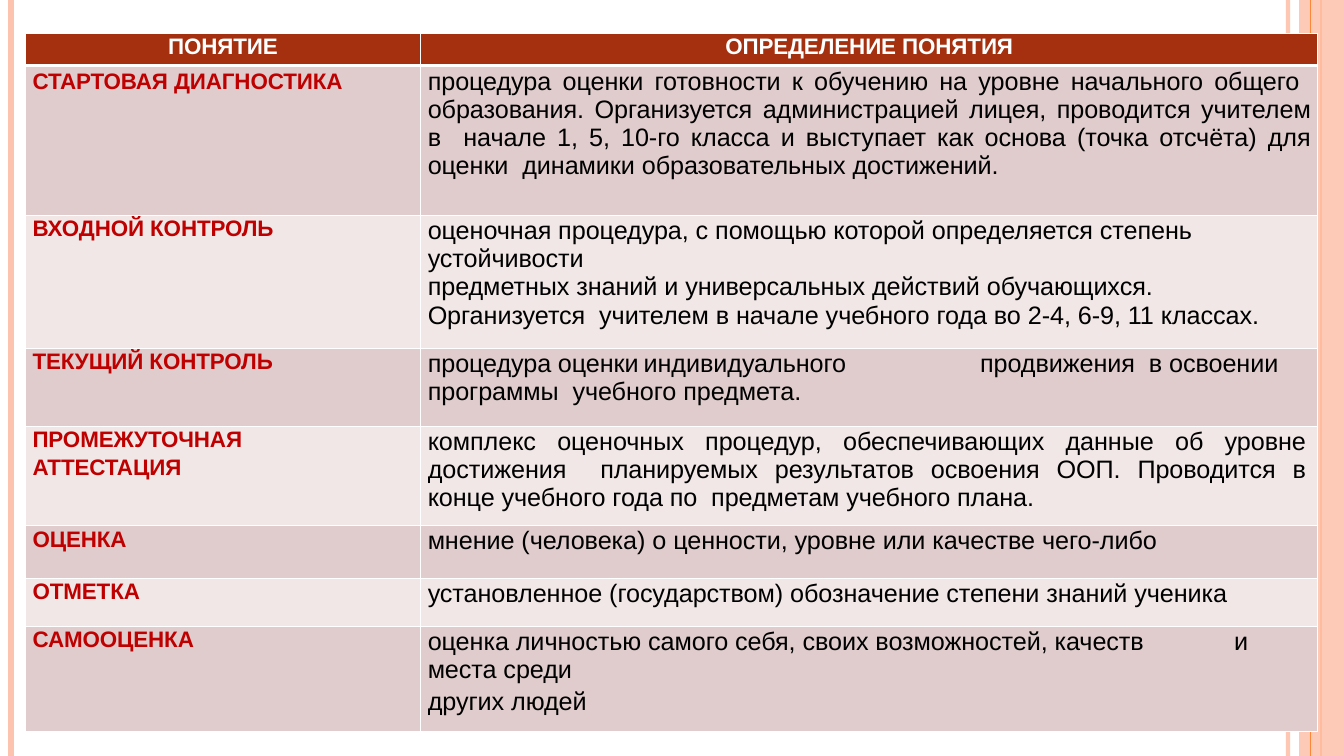
from lxml import etree
from pptx import Presentation
from pptx.dml.color import RGBColor
from pptx.enum.shapes import MSO_CONNECTOR, MSO_SHAPE
from pptx.enum.text import PP_ALIGN
from pptx.oxml.ns import qn
from pptx.util import Cm, Pt

STRAIGHT = MSO_CONNECTOR.STRAIGHT
RECTANGLE = MSO_SHAPE.RECTANGLE
LEFT, CENTER, JUSTIFY = PP_ALIGN.LEFT, PP_ALIGN.CENTER, PP_ALIGN.JUSTIFY

WIDTH, HEIGHT = 33.87, 19.05
COLUMN_WIDTHS = (9.96, 22.61)
HEADER_HEIGHT = 0.81
HEADINGS = ("ПОНЯТИЕ", "ОПРЕДЕЛЕНИЕ ПОНЯТИЯ")
FIRST_SPACE = 0.7
THIN, THICK = 1, 3

CONCEPTS = [
    (3.78, [("СТАРТОВАЯ ДИАГНОСТИКА", 2.7)],
     [("процедура оценки готовности к обучению на уровне начального общего  "
       "образования. Организуется администрацией лицея, проводится учителем "
       "в  начале 1, 5, 10-го класса и выступает как основа (точка отсчёта) "
       "для оценки  динамики образовательных достижений.", 1.1)],
     {"align": JUSTIFY}),
    (3.35, [("ВХОДНОЙ КОНТРОЛЬ", FIRST_SPACE)],
     [("оценочная процедура, с помощью которой определяется степень "
       "устойчивости", FIRST_SPACE),
      ("предметных знаний и универсальных действий обучающихся. "
       "Организуется  учителем в начале учебного года во 2-4, 6-9, "
       "11 классах.", 0)], {}),
    (1.96, [("ТЕКУЩИЙ КОНТРОЛЬ", FIRST_SPACE)],
     [("процедура\tоценки\tиндивидуального\tпродвижения  в освоении\t"
       "программы  учебного предмета.", FIRST_SPACE)],
     {"tabs": (3.28, 5.44, 10.19, 13.92, 14.66, 17.4)}),
    (2.51, [("ПРОМЕЖУТОЧНАЯ", FIRST_SPACE), ("АТТЕСТАЦИЯ", 2.5)],
     [("комплекс оценочных процедур, обеспечивающих данные об уровне "
       "достижения  планируемых результатов освоения ООП. Проводится в "
       "конце учебного года по  предметам учебного плана.", FIRST_SPACE)],
     {"align": JUSTIFY, "right_inset": 0.3}),
    (1.32, [("ОЦЕНКА", FIRST_SPACE)],
     [("мнение (человека) о ценности, уровне или качестве чего-либо",
       FIRST_SPACE)], {}),
    (1.22, [("ОТМЕТКА", FIRST_SPACE)],
     [("установленное (государством) обозначение степени знаний ученика",
       FIRST_SPACE)], {}),
    (2.64, [("САМООЦЕНКА", FIRST_SPACE)],
     [("оценка личностью самого себя, своих возможностей, качеств\tи "
       "места среди", FIRST_SPACE),
      ("других людей", 2.7)], {"tabs": (20.32,)}),
]


def color(value):
    return RGBColor.from_string(value)


def set_opacity(properties, percent):
    for element in properties.iter(qn("a:srgbClr")):
        etree.SubElement(element, qn("a:alpha"), val=str(percent * 1000))


def write_text(paragraph, text, size=16, text_color="000000", bold=False,
               align=LEFT, before=0, indent=0, tabs=()):
    paragraph.alignment = align
    paragraph.space_before = Pt(before)
    properties = paragraph._p.get_or_add_pPr()
    if indent:
        properties.set("marL", str(Cm(indent)))
    if tabs:
        tab_list = etree.SubElement(properties, qn("a:tabLst"))
        for position in tabs:
            etree.SubElement(tab_list, qn("a:tab"), pos=str(Cm(position)), algn="l")
    run = paragraph.add_run()
    run.text = text
    run.font.name = "Arial"
    run.font.size = Pt(size)
    run.font.bold = bold
    run.font.color.rgb = color(text_color)
    run._r.get_or_add_rPr().set("spc", "-5")


class SlideBuilder:
    accent = "FE8637"
    pale = "FEC3AE"
    header = "A53010"
    white = "FFFFFF"
    bands = ("E0CCCC", "F0E7E6")
    term_style = {"size": 16, "bold": True, "text_color": "BF0000", "indent": 0.18}
    definition_style = {"size": 18, "indent": 0.18, "right_inset": 0.18}
    heading_style = {"size": 16, "bold": True, "text_color": white, "align": CENTER}

    def __init__(self, slide):
        self.slide = slide

    def vertical_line(self, left, width, line_color, opacity=100):
        connector = self.slide.shapes.add_connector(
            STRAIGHT, Cm(left), Cm(0), Cm(left), Cm(HEIGHT))
        connector.line.width = Pt(width)
        connector.line.color.rgb = color(line_color)
        properties = connector._element.spPr
        if opacity < 100:
            set_opacity(properties, opacity)
        etree.SubElement(properties, qn("a:effectLst"))

    def side_band(self, left, width, opacity):
        shape = self.slide.shapes.add_shape(
            RECTANGLE, Cm(left), Cm(0), Cm(width), Cm(HEIGHT))
        shape.shadow.inherit = False
        shape.fill.solid()
        shape.fill.fore_color.rgb = color(self.pale)
        shape.line.fill.background()
        set_opacity(shape._element.spPr, opacity)

    def cell_borders(self, cell, top, bottom):
        properties = cell._tc.get_or_add_tcPr()
        for side, width in (("L", THIN), ("R", THIN), ("T", top), ("B", bottom)):
            line = etree.SubElement(properties, qn("a:ln" + side), w=str(Pt(width)))
            solid = etree.SubElement(line, qn("a:solidFill"))
            etree.SubElement(solid, qn("a:srgbClr"), val=self.white)

    def fill_cell(self, cell, paragraphs, background, top=THIN, bottom=THIN,
                  top_inset=0.03, right_inset=0, **text_style):
        cell.margin_left = cell.margin_bottom = Cm(0)
        cell.margin_top = Cm(top_inset)
        cell.margin_right = Cm(right_inset)
        self.cell_borders(cell, top, bottom)
        cell.fill.solid()
        cell.fill.fore_color.rgb = color(background)
        frame = cell.text_frame
        for index, (text, before) in enumerate(paragraphs):
            paragraph = frame.add_paragraph() if index else frame.paragraphs[0]
            write_text(paragraph, text, before=before, **text_style)

    def concept_table(self, left, top):
        heights = [HEADER_HEIGHT] + [concept[0] for concept in CONCEPTS]
        table = self.slide.shapes.add_table(
            len(heights), len(COLUMN_WIDTHS), Cm(left), Cm(top),
            Cm(sum(COLUMN_WIDTHS)), Cm(sum(heights))).table
        for column, width in zip(table.columns, COLUMN_WIDTHS):
            column.width = Cm(width)
        for row, height in zip(table.rows, heights):
            row.height = Cm(height)
        for column, heading in enumerate(HEADINGS):
            self.fill_cell(table.cell(0, column), [(heading, FIRST_SPACE)],
                           self.header, bottom=THICK, **self.heading_style)
        for row, (_, term, definition, changes) in enumerate(CONCEPTS, 1):
            background = self.bands[(row - 1) % 2]
            top_border = THICK if row == 1 else THIN
            term_inset, definition_inset = (0.1, 0.05) if row == 1 else (0.03, 0.03)
            self.fill_cell(table.cell(row, 0), term, background, top=top_border,
                           top_inset=term_inset, **self.term_style)
            self.fill_cell(table.cell(row, 1), definition, background, top=top_border,
                           top_inset=definition_inset,
                           **{**self.definition_style, **changes})


def main():
    presentation = Presentation()
    presentation.slide_width = Cm(WIDTH)
    presentation.slide_height = Cm(HEIGHT)
    builder = SlideBuilder(presentation.slides.add_slide(presentation.slide_layouts[6]))
    builder.vertical_line(32.46, 3, builder.pale, opacity=93)
    builder.vertical_line(0.28, 4.5, builder.pale)
    builder.vertical_line(33.3, 1.5, builder.accent)
    builder.side_band(32.74, 1.13, opacity=87)
    builder.vertical_line(33.02, 0.75, builder.accent)
    builder.concept_table(0.64, 0.84)
    presentation.save("out.pptx")


if __name__ == "__main__":
    main()
